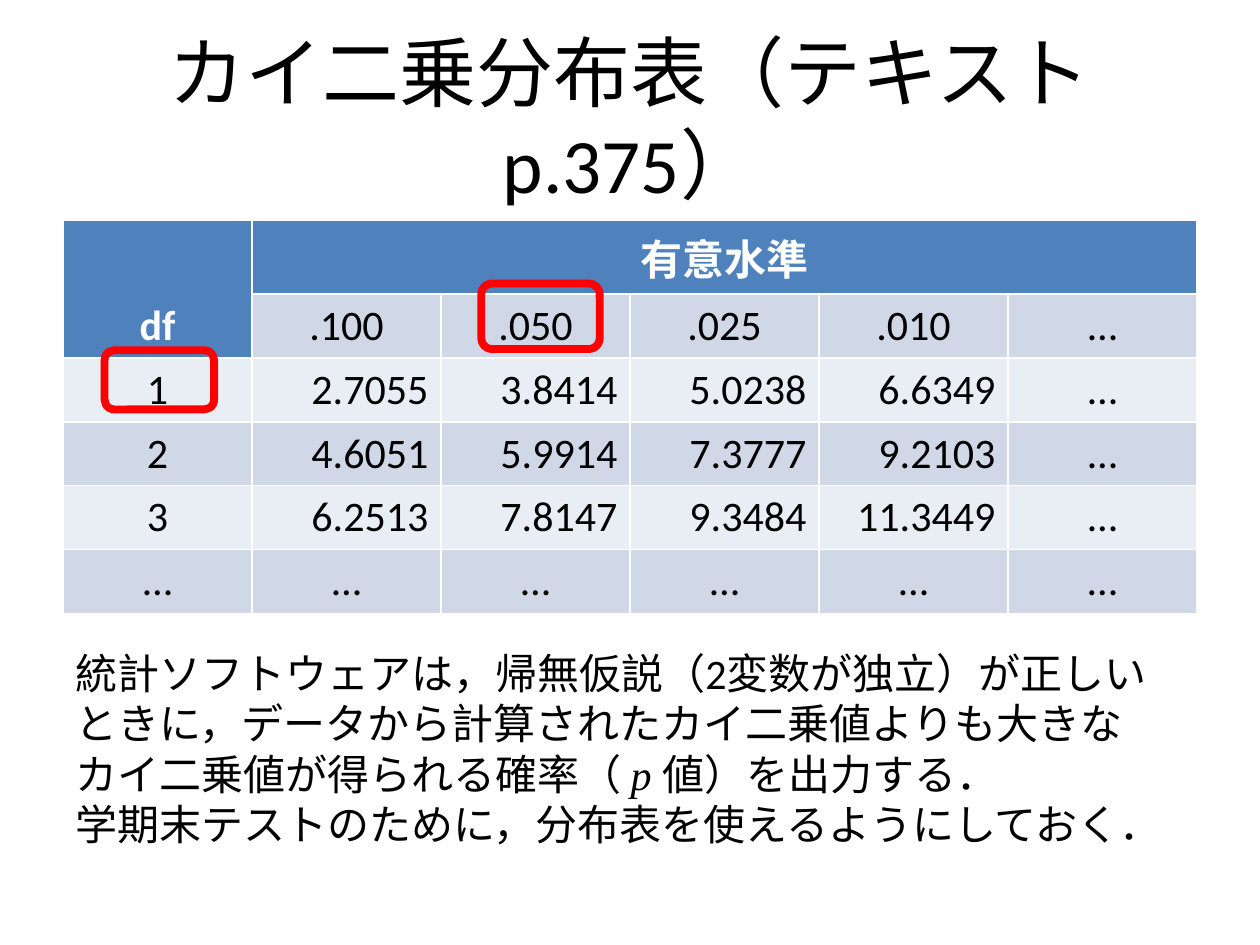
from pptx import Presentation
from pptx.dml.color import RGBColor
from pptx.enum.shapes import MSO_SHAPE
from pptx.enum.text import MSO_ANCHOR, PP_ALIGN
from pptx.util import Inches, Pt

CENTER, RIGHT = PP_ALIGN.CENTER, PP_ALIGN.RIGHT
MIDDLE, BOTTOM = MSO_ANCHOR.MIDDLE, MSO_ANCHOR.BOTTOM
ROUNDED = MSO_SHAPE.ROUNDED_RECTANGLE

COLORS = {
    "text": "000000",
    "header": "4F81BD",
    "header_text": "FFFFFF",
    "band_dark": "D0D8E8",
    "band_light": "E9EDF4",
    "mark": "FF0000",
}
BODY = {"size": Pt(24), "name": "Calibri", "bold": False, "italic": False}
HEADER = {**BODY, "bold": True}
TITLE = {**BODY, "size": Pt(44)}
SYMBOL = {**BODY, "name": "Times New Roman", "italic": True}

CHI_SQUARE = [
    ["df", "有意水準", "", "", "", ""],
    ["", ".100", ".050", ".025", ".010", "…"],
    ["1", "2.7055", "3.8414", "5.0238", "6.6349", "…"],
    ["2", "4.6051", "5.9914", "7.3777", "9.2103", "…"],
    ["3", "6.2513", "7.8147", "9.3484", "11.3449", "…"],
    ["…", "…", "…", "…", "…", "..."],
]
NOTES = [
    [("統計ソフトウェアは，帰無仮説（2変数が独立）が正しいときに，"
      "データから計算されたカイ二乗値よりも大きなカイ二乗値が得られる確率（ ", BODY),
     ("p ", SYMBOL),
     ("値）を出力する．", BODY)],
    [("学期末テストのために，分布表を使えるようにしておく．", BODY)],
]
MARKS = [(0.83, 2.78, 0.87, 0.47), (3.82, 2.25, 0.94, 0.52)]


def rgb(name):
    return RGBColor.from_string(COLORS[name])


def inches(box):
    return [Inches(v) for v in box]


def add_run(p, text, fmt, color="text"):
    r = p.add_run()
    r.text = text
    for key, value in fmt.items():
        setattr(r.font, key, value)
    r.font.color.rgb = rgb(color)


def set_title(s, text):
    sp = s.shapes.title
    sp.left, sp.top, sp.width, sp.height = inches((0.5, 0.3, 9, 1.25))
    tf = sp.text_frame
    tf.vertical_anchor = MIDDLE
    p = tf.paragraphs[0]
    p.alignment = CENTER
    add_run(p, text, TITLE)


def fill_cell(cell, text, fill, fmt, color):
    cell.fill.solid()
    cell.fill.fore_color.rgb = rgb(fill)
    if text:
        p = cell.text_frame.paragraphs[0]
        p.alignment = RIGHT if len(text.partition(".")[2]) == 4 else CENTER
        add_run(p, text, fmt, color)


def add_distribution_table(s, rows):
    box = inches((0.5, 1.75, 9, 3))
    table = s.shapes.add_table(len(rows), len(rows[0]), *box).table
    table.cell(0, 0).merge(table.cell(1, 0))
    table.cell(0, 1).merge(table.cell(0, 5))
    table.cell(0, 0).vertical_anchor = BOTTOM
    for i, row in enumerate(rows):
        band = "band_dark" if i % 2 else "band_light"
        for j, text in enumerate(row):
            if i == 0 or (i, j) == (1, 0):
                style = ("header", HEADER, "header_text")
            else:
                style = (band, BODY, "text")
            fill_cell(table.cell(i, j), text, *style)


def add_mark(s, box):
    sp = s.shapes.add_shape(ROUNDED, *inches(box))
    sp.shadow.inherit = False
    sp.fill.background()
    sp.line.color.rgb = rgb("mark")
    sp.line.width = Pt(4.5)


def add_notes_text(s, paragraphs):
    tf = s.shapes.add_textbox(*inches((0.5, 5.09, 8.83, 1.72))).text_frame
    tf.word_wrap = True
    for i, runs in enumerate(paragraphs):
        p = tf.add_paragraph() if i else tf.paragraphs[0]
        for text, fmt in runs:
            add_run(p, text, fmt)


def main():
    prs = Presentation()
    prs.slide_width, prs.slide_height = Inches(10), Inches(7.5)
    s = prs.slides.add_slide(prs.slide_layouts.get_by_name("Title Only"))
    set_title(s, "カイ二乗分布表（テキスト p.375）")
    add_distribution_table(s, CHI_SQUARE)
    for box in MARKS:
        add_mark(s, box)
    add_notes_text(s, NOTES)
    prs.save("out.pptx")


if __name__ == "__main__":
    main()
